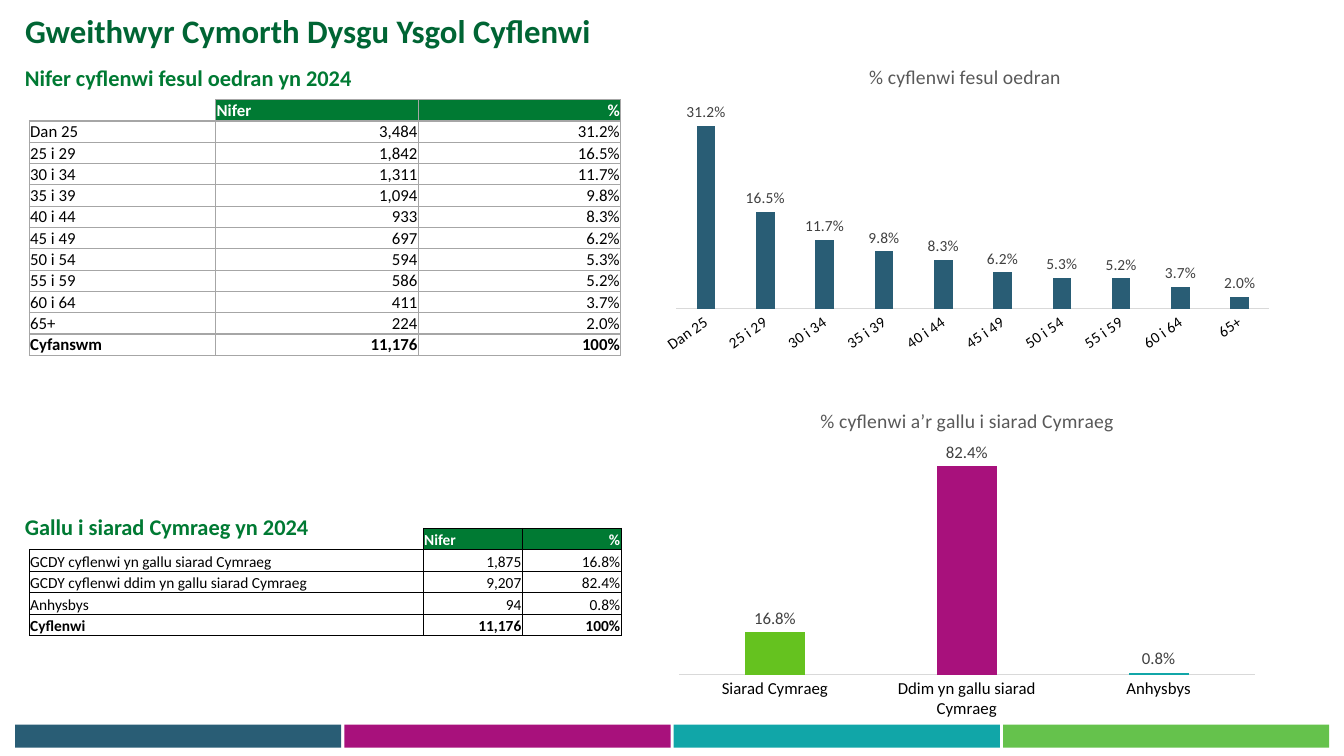
from lxml import etree
from pptx import Presentation
from pptx.chart.data import CategoryChartData
from pptx.dml.color import RGBColor
from pptx.enum.chart import XL_CHART_TYPE, XL_LABEL_POSITION, XL_TICK_MARK
from pptx.enum.shapes import MSO_SHAPE
from pptx.enum.text import MSO_ANCHOR, PP_ALIGN
from pptx.oxml import parse_xml
from pptx.oxml.ns import nsdecls, qn
from pptx.util import Cm, Pt

COLUMNS = XL_CHART_TYPE.COLUMN_CLUSTERED
OUTSIDE = XL_LABEL_POSITION.OUTSIDE_END
NO_TICK = XL_TICK_MARK.NONE
RECTANGLE = MSO_SHAPE.RECTANGLE
MIDDLE, BOTTOM = MSO_ANCHOR.MIDDLE, MSO_ANCHOR.BOTTOM
LEFT, RIGHT = PP_ALIGN.LEFT, PP_ALIGN.RIGHT

FONT = "Calibri"
DARK_GREEN = RGBColor(0x00, 0x65, 0x34)
GREEN = RGBColor(0x00, 0x7A, 0x33)
LIME = RGBColor(0x65, 0xC2, 0x1F)
LEAF = RGBColor(0x65, 0xC2, 0x4C)
NAVY = RGBColor(0x29, 0x5D, 0x75)
MAGENTA = RGBColor(0xA8, 0x11, 0x7C)
TEAL = RGBColor(0x11, 0xA6, 0xA8)
BLACK = RGBColor(0x00, 0x00, 0x00)
WHITE = RGBColor(0xFF, 0xFF, 0xFF)
LABEL_GREY = RGBColor(0x40, 0x40, 0x40)
TITLE_GREY = RGBColor(0x59, 0x59, 0x59)
AXIS_GREY = RGBColor(0xD9, 0xD9, 0xD9)
BORDER_GREY = RGBColor(0xA6, 0xA6, 0xA6)

AGES = [
    ("Dan 25", "3,484", 31.2), ("25 i 29", "1,842", 16.5),
    ("30 i 34", "1,311", 11.7), ("35 i 39", "1,094", 9.8),
    ("40 i 44", "933", 8.3), ("45 i 49", "697", 6.2),
    ("50 i 54", "594", 5.3), ("55 i 59", "586", 5.2),
    ("60 i 64", "411", 3.7), ("65+", "224", 2.0),
]
SPEAKERS = [
    ("GCDY cyflenwi yn gallu siarad Cymraeg", "1,875", 16.8),
    ("GCDY cyflenwi ddim yn gallu siarad Cymraeg", "9,207", 82.4),
    ("Anhysbys", "94", 0.8),
]
SPEAKER_LABELS = ["Siarad Cymraeg", "Ddim yn gallu siarad Cymraeg", "Anhysbys"]


def style_font(font, size, colour, bold=False):
    """Apply the slide's typeface with a size, colour and weight."""
    font.name = FONT
    font.size = Pt(size)
    font.color.rgb = colour
    font.bold = bold


def add_title(page, text):
    """Place and format the title placeholder."""
    title = page.shapes.title
    title.left, title.top, title.width, title.height = Cm(0.38), Cm(0.23), Cm(17.55), Cm(1.22)
    frame = title.text_frame
    frame.text = text
    frame.vertical_anchor = MIDDLE
    para = frame.paragraphs[0]
    para.alignment = LEFT
    para.line_spacing = 0.9
    style_font(para.runs[0].font, 23.4, DARK_GREEN, True)


def add_heading(page, text, top, width):
    """Add a green heading above a table."""
    frame = page.shapes.add_textbox(Cm(0.38), Cm(top), Cm(width), Cm(0.94)).text_frame
    frame.word_wrap = True
    frame.text = text
    style_font(frame.paragraphs[0].runs[0].font, 16, GREEN, True)


def add_footer(page):
    """Add the band of four coloured bars."""
    for index, colour in enumerate((NAVY, MAGENTA, TEAL, LEAF)):
        bar = page.shapes.add_shape(
            RECTANGLE, Cm(0.38 + 8.3 * index), Cm(18.26), Cm(8.22), Cm(0.58))
        bar.shadow.inherit = False
        bar.fill.solid()
        bar.fill.fore_color.rgb = colour
        bar.line.fill.background()


def set_borders(cell, sides, colour, width):
    """Draw solid borders on the given sides of a cell and none on the others."""
    properties = cell._tc.get_or_add_tcPr()
    solid = f'<a:solidFill><a:srgbClr val="{colour}"/></a:solidFill>'
    for side in "LRTB":
        fill = solid if side in sides else "<a:noFill/>"
        properties.append(parse_xml(
            f'<a:ln{side} {nsdecls("a")} w="{Pt(width)}">{fill}</a:ln{side}>'))


def format_cell(cell, text, size, colour, bold, alignment):
    """Write a cell's text with tight margins."""
    cell.margin_left = cell.margin_right = cell.margin_top = Cm(0.02)
    cell.margin_bottom = 0
    cell.vertical_anchor = BOTTOM
    cell.text = text
    para = cell.text_frame.paragraphs[0]
    para.alignment = alignment
    for span in para.runs:
        style_font(span.font, size, colour, bold)
    if not text:
        etree.SubElement(para._p, qn("a:endParaRPr"), sz=str(size * 100))


def add_count_table(page, data, total, top, widths, height, size, border, line):
    """Add a table of counts and shares with a header and a total."""
    rows = [("", "Nifer", "%")]
    rows += [(name, count, f"{share:.1f}%") for name, count, share in data]
    rows.append((total, "11,176", "100%"))
    table = page.shapes.add_table(
        len(rows), 3, Cm(0.74), Cm(top), Cm(sum(widths)), Cm(height)).table
    table.first_row = table.horz_banding = False
    for column, width in zip(table.columns, widths):
        column.width = Cm(width)
    for row_index, values in enumerate(rows):
        table.rows[row_index].height = Cm(height / len(rows))
        header = row_index == 0
        bold = header or row_index == len(rows) - 1
        for column_index, text in enumerate(values):
            cell = table.cell(row_index, column_index)
            left = column_index == 0 or text == "Nifer"
            format_cell(cell, text, size, WHITE if header else BLACK, bold,
                        LEFT if left else RIGHT)
            set_borders(cell, "LRTB" if text else "RB", border, line)
            if header and text:
                cell.fill.solid()
                cell.fill.fore_color.rgb = GREEN
            else:
                cell.fill.background()


def set_layout(parent, index, target="", **places):
    """Give a chart part a fixed place, as fractions of the chart."""
    for old in parent.findall(qn("c:layout")):
        parent.remove(old)
    inner = f'<c:layoutTarget val="{target}"/>' if target else ""
    inner += "".join(f'<c:{key}Mode val="edge"/>' for key in "xy")
    inner += "".join(f'<c:{key} val="{value}"/>' for key, value in places.items())
    parent.insert(index, parse_xml(
        f'<c:layout {nsdecls("c")}><c:manualLayout>{inner}</c:manualLayout></c:layout>'))


def add_share_chart(page, title, names, shares, bounds, size, maximum, title_x, plot):
    """Add a column chart of percentages and return it."""
    data = CategoryChartData(number_format="0.0%")
    data.categories = names
    data.add_series("Series 1", [round(share / 100, 3) for share in shares])
    chart = page.shapes.add_chart(COLUMNS, *map(Cm, bounds), data).chart
    style_font(chart.font, 10, BLACK)
    chart.has_legend = False
    chart.has_title = True
    chart.chart_title.text_frame.text = title
    style_font(chart.chart_title.text_frame.paragraphs[0].runs[0].font, 14, TITLE_GREY)
    set_layout(chart.element.find(".//" + qn("c:title")), 1, x=title_x, y=0.03)
    set_layout(chart.element.find(".//" + qn("c:plotArea")), 0, "inner", **plot)

    values = chart.value_axis
    values.minimum_scale, values.maximum_scale = 0, maximum
    values.has_major_gridlines = False
    values.visible = False
    categories = chart.category_axis
    categories.major_tick_mark = categories.minor_tick_mark = NO_TICK
    categories.format.line.color.rgb = AXIS_GREY
    categories.format.line.width = Pt(0.75)
    style_font(categories.tick_labels.font, size, BLACK)

    bars = chart.plots[0]
    bars.gap_width, bars.overlap = 219, -27
    bars.vary_by_categories = False
    bars.has_data_labels = True
    labels = bars.data_labels
    labels.show_value = True
    labels.position = OUTSIDE
    labels.number_format, labels.number_format_is_linked = "0.0%", False
    style_font(labels.font, size, LABEL_GREY)
    return chart


def fill_solid(part, colour):
    """Fill a chart series or point with one colour."""
    part.format.fill.solid()
    part.format.fill.fore_color.rgb = colour


def main():
    """Build the slide and save it."""
    deck = Presentation()
    deck.slide_width, deck.slide_height = Cm(33.87), Cm(19.05)
    page = deck.slides.add_slide(deck.slide_layouts[5])
    add_footer(page)
    add_title(page, "Gweithwyr Cymorth Dysgu Ysgol Cyflenwi")
    add_count_table(page, AGES, "Cyfanswm", 2.51, (4.7, 5.1, 5.1), 6.4, 12, BORDER_GREY, 1)
    add_heading(page, "Nifer cyflenwi fesul oedran yn 2024", 1.5, 15.54)
    add_count_table(page, SPEAKERS, "Cyflenwi", 13.31, (9.93, 2.49, 2.49), 2.71, 11, BLACK, 0.5)
    add_heading(page, "Gallu i siarad Cymraeg yn 2024", 12.8, 9.96)

    speakers = add_share_chart(
        page, "% cyflenwi a’r gallu i siarad Cymraeg", SPEAKER_LABELS,
        [row[2] for row in SPEAKERS], (16.81, 9.93, 15.11, 8.33), 12, 0.9, 0.25,
        {"x": 0.02, "y": 0.16, "w": 0.96, "h": 0.69})
    for point, colour in enumerate((LIME, MAGENTA, TEAL)):
        fill_solid(speakers.plots[0].series[0].points[point], colour)
    ages = add_share_chart(
        page, "% cyflenwi fesul oedran", [row[0] for row in AGES],
        [row[2] for row in AGES], (16.41, 1.27, 15.9, 7.85), 11, 0.35, 0.34,
        {"x": 0.04, "y": 0.17, "w": 0.94, "h": 0.66})
    fill_solid(ages.plots[0].series[0], NAVY)
    ages.category_axis._element.find(".//" + qn("a:bodyPr")).set("rot", "-2100000")
    deck.save("out.pptx")


if __name__ == "__main__":
    main()
